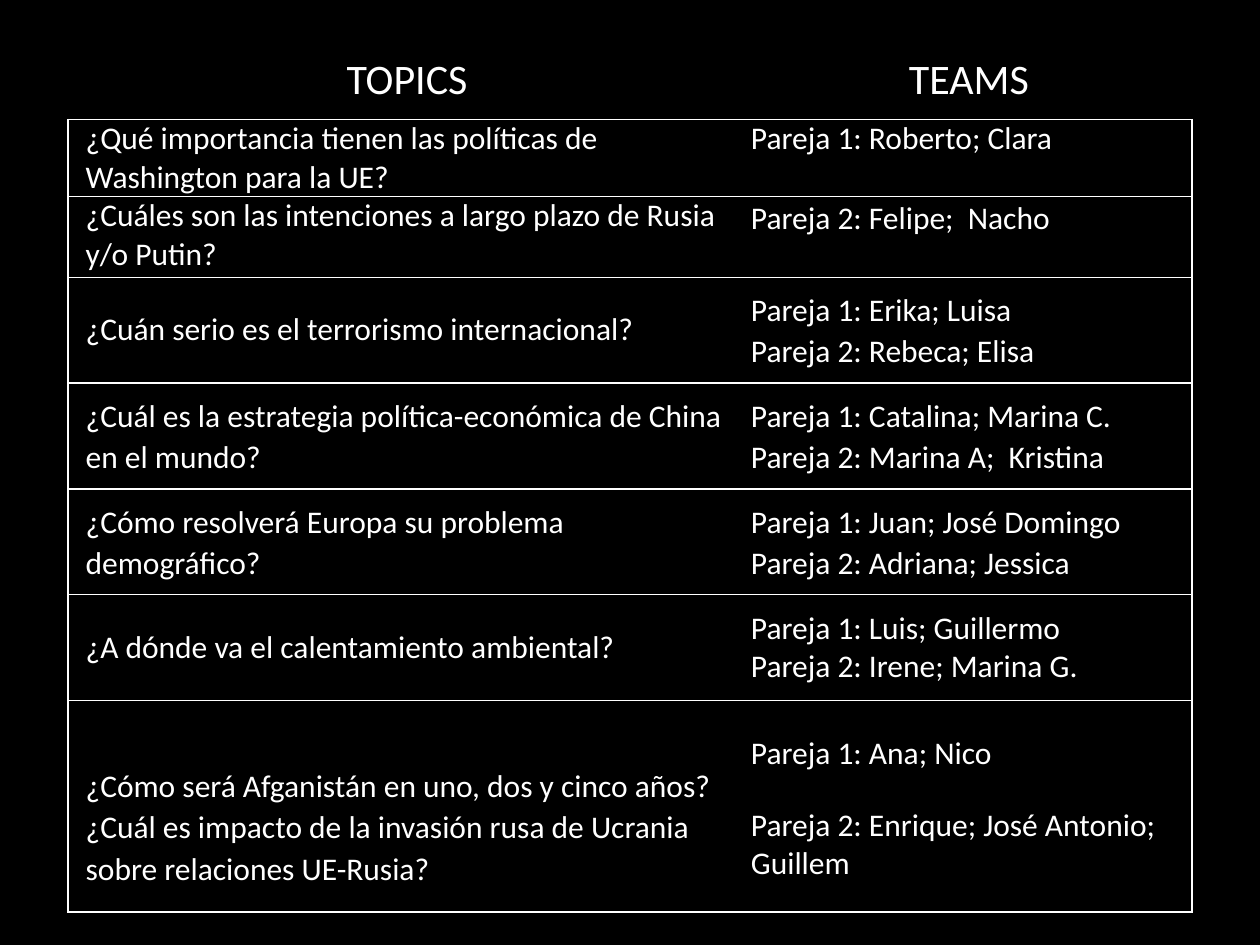
from pptx import Presentation
from pptx import util as u
from pptx.dml.color import RGBColor
from pptx.enum import text
from pptx.oxml import parse_xml
from pptx.oxml.ns import nsdecls

BLACK = RGBColor(0, 0, 0)
WHITE = RGBColor(255, 255, 255)
TOP, MIDDLE, BOTTOM = (
    text.MSO_ANCHOR.TOP, text.MSO_ANCHOR.MIDDLE, text.MSO_ANCHOR.BOTTOM)
TIGHT = {"space_after": u.Pt(12)}
LOOSE = {"line_spacing": 1.07}

HEADINGS = ["TOPICS", "TEAMS"]
DEBATES = [
    (0.6, ("¿Qué importancia tienen las políticas de Washington para la UE?", TIGHT, TOP),
     (["Pareja 1: Roberto; Clara"], {}, TOP)),
    (0.64, ("¿Cuáles son las intenciones a largo plazo de Rusia y/o Putin?", TIGHT, TOP),
     (["Pareja 2: Felipe;  Nacho"], LOOSE, TOP)),
    (0.84, ("¿Cuán serio es el terrorismo internacional?", TIGHT, MIDDLE),
     (["Pareja 1: Erika; Luisa", "Pareja 2: Rebeca; Elisa"], LOOSE, MIDDLE)),
    (0.84, ("¿Cuál es la estrategia política-económica de China en el mundo?", LOOSE, MIDDLE),
     (["Pareja 1: Catalina; Marina C.", "Pareja 2: Marina A;  Kristina"], LOOSE, MIDDLE)),
    (0.84, ("¿Cómo resolverá Europa su problema demográfico?", LOOSE, MIDDLE),
     (["Pareja 1: Juan; José Domingo", "Pareja 2: Adriana; Jessica"], LOOSE, MIDDLE)),
    (0.84, ("¿A dónde va el calentamiento ambiental?", TIGHT, MIDDLE),
     (["Pareja 1: Luis; Guillermo\nPareja 2: Irene; Marina G."], TIGHT, MIDDLE)),
    (0.84, ("¿Cómo será Afganistán en uno, dos y cinco años?", LOOSE, BOTTOM),
     (["Pareja 1: Ana; Nico"], TIGHT, MIDDLE)),
    (0.84, ("¿Cuál es impacto de la invasión rusa de Ucrania sobre relaciones UE-Rusia?", LOOSE, TOP),
     (["Pareja 2: Enrique; José Antonio; Guillem"], TIGHT, TOP)),
]
COLUMN_WIDTHS = [5.38, 3.54]
HEADING_HEIGHT = 0.66
JOINED_ROW = 7


def write_cell(cell, paragraphs, style, anchor, size, indent=0, alignment=None):
    cell.vertical_anchor = anchor
    cell.margin_left = cell.margin_right = u.Inches(0.04)
    cell.margin_top = cell.margin_bottom = 0
    frame = cell.text_frame
    for index, content in enumerate(paragraphs):
        paragraph = frame.add_paragraph() if index else frame.paragraphs[0]
        paragraph._p.get_or_add_pPr().set("marL", str(u.Inches(indent)))
        paragraph.alignment = alignment
        for name, value in style.items():
            setattr(paragraph, name, value)
        for line_index, line in enumerate(content.split("\n")):
            if line_index:
                paragraph.add_line_break()
            run = paragraph.add_run()
            run.text = line
            run.font.name = "Calibri"
            run.font.size = u.Pt(size)
            run.font.color.rgb = WHITE
        paragraph.font.size = u.Pt(size)


def set_borders(cell, visible):
    properties = cell._tc.get_or_add_tcPr()
    for side in ("lnL", "lnR", "lnT", "lnB"):
        paint = (f'<a:solidFill><a:srgbClr val="{WHITE}"/></a:solidFill>'
                 if side in visible else "<a:noFill/>")
        properties.append(parse_xml(
            f'<a:{side} {nsdecls("a")} w="{u.Pt(1)}">{paint}</a:{side}>'))
    cell.fill.background()


def visible_borders(row, column, last_row):
    sides = set()
    if row:
        sides.add("lnR" if column else "lnL")
        if row != JOINED_ROW + 1:
            sides.add("lnT")
    if row != JOINED_ROW and row <= last_row:
        sides.add("lnB")
    return sides


def main():
    presentation = Presentation()
    presentation.slide_width = u.Inches(10)
    presentation.slide_height = u.Inches(7.5)
    slide = presentation.slides.add_slide(presentation.slide_layouts[6])
    slide.background.fill.solid()
    slide.background.fill.fore_color.rgb = BLACK

    heights = [HEADING_HEIGHT] + [height for height, _, _ in DEBATES]
    table = slide.shapes.add_table(
        len(heights), len(COLUMN_WIDTHS), u.Inches(0.54), u.Inches(0.29),
        u.Inches(sum(COLUMN_WIDTHS)), u.Inches(sum(heights))).table
    table.first_row = table.horz_banding = False
    for column, width in zip(table.columns, COLUMN_WIDTHS):
        column.width = u.Inches(width)
    for row, height in zip(table.rows, heights):
        row.height = u.Inches(height)

    for column, heading in enumerate(HEADINGS):
        write_cell(table.cell(0, column), [heading], LOOSE, MIDDLE, 24,
                   alignment=text.PP_ALIGN.CENTER)
    for row, (_, (topic, style, anchor), team) in enumerate(DEBATES, 1):
        write_cell(table.cell(row, 0), [topic], style, anchor, 18, indent=0.1)
        write_cell(table.cell(row, 1), *team, 18)
    for row in range(len(heights)):
        for column in range(len(COLUMN_WIDTHS)):
            set_borders(table.cell(row, column),
                        visible_borders(row, column, len(DEBATES)))

    presentation.save("out.pptx")


if __name__ == "__main__":
    main()
